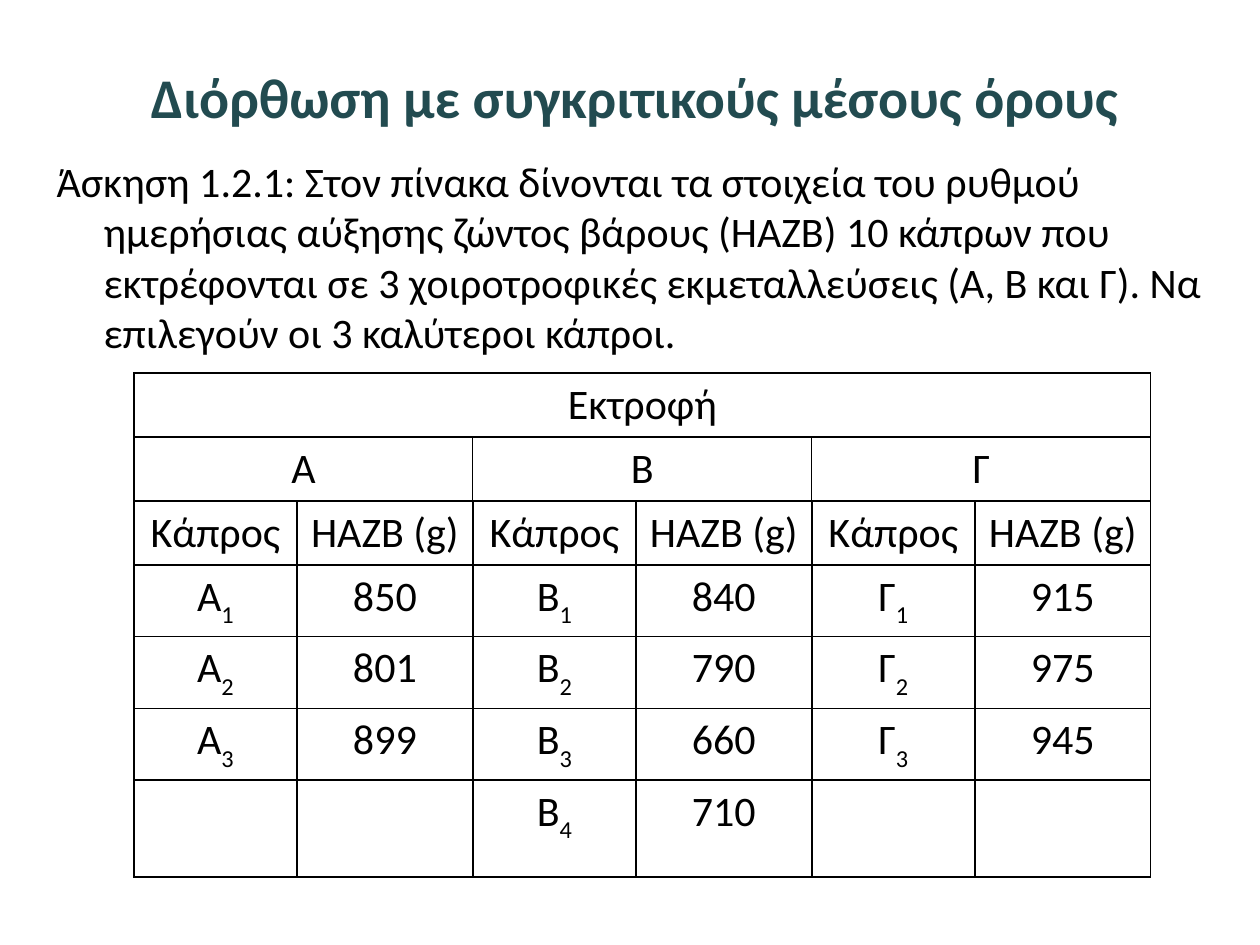
from dataclasses import dataclass

from lxml import etree
from pptx import Presentation
from pptx import util as u
from pptx.dml.color import RGBColor
from pptx.enum import text
from pptx.oxml.ns import qn

EMU_PER_PX = 914400 / 126
COLOURS = {"title": "224B50", "ink": "000000"}
HANGING_PX = 47
TITLE_FONT = {"name": "Calibri", "size": u.Pt(32), "bold": True}
BODY_FONT = {"name": "Calibri", "size": u.Pt(24), "bold": False}

TITLE = "Διόρθωση με συγκριτικούς μέσους όρους"
EXERCISE = (
    "Άσκηση 1.2.1: Στον πίνακα δίνονται τα στοιχεία του ρυθμού ημερήσιας αύξησης "
    "ζώντος βάρους (ΗΑΖΒ) 10 κάπρων που εκτρέφονται σε 3 χοιροτροφικές "
    "εκμεταλλεύσεις (Α, Β και Γ). Nα επιλεγούν οι 3 καλύτεροι κάπροι."
)
COLUMN_WIDTHS = [163, 176] * 3
ROW_HEIGHTS = [64] * 3 + [63] * 3 + [97]
GROUP_ROW = 1
FIRST_DATA_ROW = 3


@dataclass
class Box:
    left: int
    top: int
    width: int
    height: int


@dataclass
class Farm:
    name: str
    boar_heading: str
    boar_letter: str
    gains: list[int]


FARMS = [
    Farm("Α", "Κάπρος", "A", [850, 801, 899]),
    Farm("Β", "Kάπρος", "B", [840, 790, 660, 710]),
    Farm("Γ", "Κάπρος", "Γ", [915, 975, 945]),
]


def px(length: int) -> u.Emu:
    return u.Emu(round(length * EMU_PER_PX))


def place(shape, box: Box) -> None:
    for side in ("left", "top", "width", "height"):
        setattr(shape, side, px(getattr(box, side)))


def add_span(para, words: str, font: dict, colour: str, subscript: bool = False) -> None:
    span = para.add_run()
    span.text = words
    for name, value in font.items():
        setattr(span.font, name, value)
    span.font.color.rgb = RGBColor.from_string(COLOURS[colour])
    if subscript:
        span.font._element.set("baseline", "-30000")


def hang_indent(para) -> None:
    """Give the paragraph a hanging indent and no bullet."""
    properties = para._p.get_or_add_pPr()
    properties.set("marL", str(px(HANGING_PX)))
    properties.set("indent", str(-px(HANGING_PX)))
    etree.SubElement(properties, qn("a:buNone"))


def fill_placeholder(shape, box: Box, words: str, font: dict, colour: str):
    place(shape, box)
    shape.text_frame.auto_size = text.MSO_AUTO_SIZE.NONE
    para = shape.text_frame.paragraphs[0]
    add_span(para, words, font, colour)
    return para


def write_cell(cell, words: str, subscript: str = "") -> None:
    para = cell.text_frame.paragraphs[0]
    para.alignment = text.PP_ALIGN.CENTER
    hang_indent(para)
    add_span(para, words, BODY_FONT, "ink")
    if subscript:
        add_span(para, subscript, BODY_FONT, "ink", subscript=True)


def add_borders(cell, widths: dict[str, float]) -> None:
    properties = cell._tc.get_or_add_tcPr()
    for side, width in widths.items():
        line = etree.SubElement(properties, qn(f"a:ln{side}"), w=str(u.Pt(width)))
        fill = etree.SubElement(line, qn("a:solidFill"))
        etree.SubElement(fill, qn("a:srgbClr"), val=COLOURS["ink"])


def add_farm(table, farm: Farm, column: int) -> None:
    """Write one farm into its pair of columns."""
    table.cell(GROUP_ROW, column).merge(table.cell(GROUP_ROW, column + 1))
    write_cell(table.cell(GROUP_ROW, column), farm.name)
    write_cell(table.cell(GROUP_ROW + 1, column), farm.boar_heading)
    write_cell(table.cell(GROUP_ROW + 1, column + 1), "ΗΑΖΒ (g)")
    for number, gain in enumerate(farm.gains, start=1):
        row = FIRST_DATA_ROW + number - 1
        write_cell(table.cell(row, column), farm.boar_letter, str(number))
        write_cell(table.cell(row, column + 1), str(gain))


def add_gain_table(slide, left: int, top: int) -> None:
    size = sum(COLUMN_WIDTHS), sum(ROW_HEIGHTS)
    table = slide.shapes.add_table(
        len(ROW_HEIGHTS), len(COLUMN_WIDTHS), *map(px, (left, top, *size))
    ).table
    table.first_row = table.horz_banding = False
    for column, width in zip(table.columns, COLUMN_WIDTHS):
        column.width = px(width)
    for row, height in zip(table.rows, ROW_HEIGHTS):
        row.height = px(height)

    last = len(COLUMN_WIDTHS) - 1
    table.cell(0, 0).merge(table.cell(0, last))
    write_cell(table.cell(0, 0), "Εκτροφή")
    for index, farm in enumerate(FARMS):
        add_farm(table, farm, 2 * index)

    for row_index, row in enumerate(table.rows):
        for column_index, cell in enumerate(row.cells):
            if not cell.is_spanned:
                end = column_index + (cell.span_width if cell.is_merge_origin else 1) - 1
                inner = 0.75 if row_index == GROUP_ROW else 1
                add_borders(cell, {
                    "L": inner if column_index > 0 else 1,
                    "R": inner if end < last else 1,
                    "T": 1,
                    "B": 1,
                })
            cell.fill.background()


def main() -> None:
    deck = Presentation()
    deck.slide_width, deck.slide_height = px(1260), px(945)
    slide = deck.slides.add_slide(deck.slide_layouts[1])
    title, body = slide.placeholders
    fill_placeholder(title, Box(68, 18, 1134, 157), TITLE, TITLE_FONT, "title")
    hang_indent(fill_placeholder(body, Box(44, 149, 1181, 669), EXERCISE, BODY_FONT, "ink"))
    add_gain_table(slide, 134, 373)
    deck.save("out.pptx")


if __name__ == "__main__":
    main()
